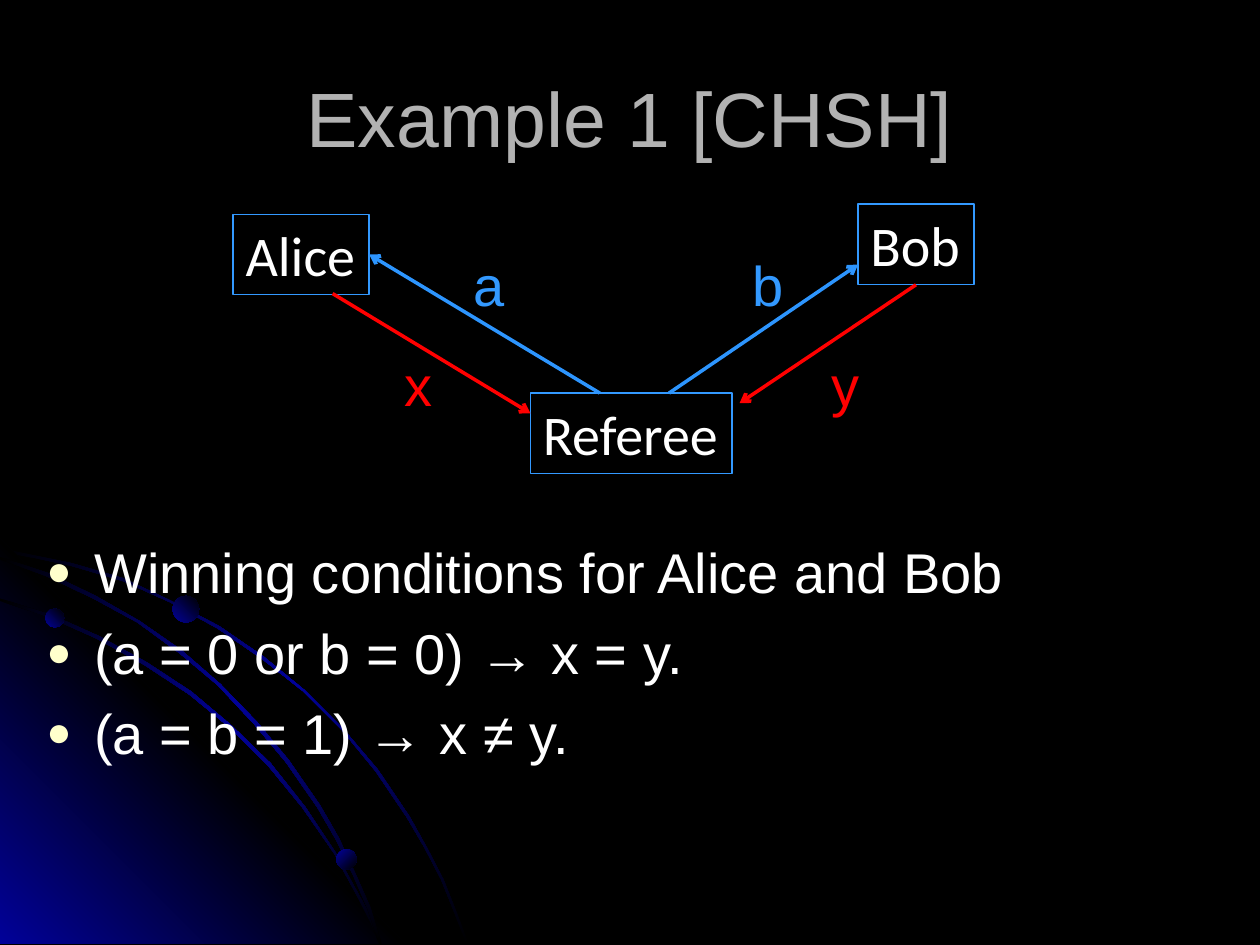
from lxml.etree import SubElement
from pptx import Presentation
from pptx.dml.color import RGBColor
from pptx.enum.shapes import MSO_CONNECTOR as Link, MSO_SHAPE as Preset
from pptx.enum.text import MSO_ANCHOR as Anchor, PP_ALIGN as Align
from pptx.oxml import parse_xml
from pptx.oxml.ns import nsdecls, qn
from pptx.util import Inches, Pt

BLACK, WHITE, NAVY, RED = "000000", "FFFFFF", "010199", "FF0000"
SKY, ARROW_BLUE, GREY, CREAM = "3399FF", "2D95FE", "B2B2B2", "FFFFCC"

TITLE = "Example 1 [CHSH]"
CONDITIONS = [
    "Winning conditions for Alice and Bob",
    "(a = 0 or b = 0) → x = y.",
    "(a = b = 1) → x ≠ y.",
]
PLAYERS = [  # name, left, top, width
    ("Alice", 1.85, 1.7, 1.08),
    ("Bob", 6.81, 1.62, 0.92),
    ("Referee", 4.21, 3.12, 1.6),
]
MESSAGES = [  # start, end, colour
    ((4.76, 3.12), (2.93, 2.02), ARROW_BLUE),
    ((5.31, 3.12), (6.81, 2.1), ARROW_BLUE),
    ((7.27, 2.26), (5.87, 3.2), RED),
    ((2.64, 2.33), (4.21, 3.28), RED),
]
MESSAGE_NAMES = [  # name, left, top, width, colour
    ("a", 3.66, 1.94, 0.45, SKY),
    ("b", 5.87, 1.94, 0.45, SKY),
    ("x", 3.11, 2.73, 0.42, RED),
    ("y", 6.5, 2.73, 0.42, RED),
]

GLOW = [(0, NAVY), (50, BLACK), (100, NAVY)]
STREAK = [(0, BLACK), (50, NAVY), (100, BLACK)]
BALL = [(0, NAVY), (100, BLACK)]
OUTER_ORBIT = [
    (0.57, 4.47), (0.28, 4.41), (0, 4.35), (0, 4.38), (0.28, 4.43), (0.56, 4.49),
    (0.97, 4.61), (1.35, 4.78), (1.73, 4.99), (2.08, 5.23), (2.41, 5.49),
    (2.71, 5.79), (2.98, 6.12), (3.23, 6.49), (3.37, 6.73), (3.5, 6.98),
    (3.6, 7.23), (3.7, 7.49), (3.72, 7.49), (3.62, 7.23), (3.52, 6.98),
    (3.39, 6.73), (3.25, 6.48), (3, 6.11), (2.72, 5.78), (2.42, 5.48),
    (2.09, 5.21), (1.74, 4.97), (1.36, 4.77), (0.98, 4.59)]
CORNER = [(3.22, 7.49), (0, 7.49), (0, 4.27)]
INNER_ORBIT = [
    (2.85, 7.14), (2.94, 7.32), (3.01, 7.49), (3.03, 7.49), (2.96, 7.3),
    (2.86, 7.12), (2.66, 6.76), (2.42, 6.4), (2.15, 6.06), (1.84, 5.76),
    (1.52, 5.49), (1.17, 5.26), (0.79, 5.05), (0.41, 4.88), (0, 4.75),
    (0, 4.77), (0.39, 4.9), (0.77, 5.07), (1.15, 5.28), (1.5, 5.51),
    (1.83, 5.78), (2.13, 6.08), (2.4, 6.41), (2.65, 6.77)]
MIDDLE_ORBIT = [
    (0, 4.42), (0, 4.44), (0.36, 4.57), (0.74, 4.75), (1.09, 4.94), (1.42, 5.18),
    (1.73, 5.44), (2.02, 5.75), (2.27, 6.05), (2.52, 6.41), (2.67, 6.67),
    (2.8, 6.94), (2.92, 7.22), (3.01, 7.49), (3.03, 7.49), (2.94, 7.2),
    (2.82, 6.93), (2.69, 6.65), (2.54, 6.39), (2.29, 6.03), (2.04, 5.73),
    (1.75, 5.43), (1.44, 5.16), (1.11, 4.93), (0.76, 4.73), (0.39, 4.55)]
BACKDROP = [  # outline, gradient, angle
    (OUTER_ORBIT, STREAK, 45),
    (CORNER, GLOW, 315),
    (INNER_ORBIT, STREAK, 45),
    (MIDDLE_ORBIT, STREAK, 45),
]
BALLS = [  # left, top, diameter, angle
    (0.36, 4.83, 0.15, 315),
    (2.67, 6.74, 0.16, 45),
    (1.37, 4.73, 0.21, 315),
]


def rgb(value):
    return RGBColor.from_string(value)


def paint_gradient(shape, stops, angle):
    """Fill with colour stops along a clockwise angle, with no outline."""
    shape.shadow.inherit = False
    shape.line.fill.background()
    marks = "".join(
        f'<a:gs pos="{pos * 1000}"><a:srgbClr val="{colour}"/></a:gs>'
        for pos, colour in stops)
    gradient = parse_xml(
        f'<a:gradFill {nsdecls("a")} rotWithShape="1"><a:gsLst>{marks}</a:gsLst>'
        f'<a:lin ang="{angle * 60000}" scaled="0"/></a:gradFill>')
    shape.line._ln.addprevious(gradient)


def style(paragraph, font, size, colour, align=Align.LEFT):
    paragraph.alignment = align
    paragraph.font.name = font
    paragraph.font.size = Pt(size)
    paragraph.font.color.rgb = rgb(colour)


def add_bullet(paragraph):
    props = paragraph._p.get_or_add_pPr()
    props.set("marL", str(Inches(0.38)))
    props.set("indent", str(Inches(-0.38)))
    bullet = [
        f'<a:buClr {nsdecls("a")}><a:srgbClr val="{CREAM}"/></a:buClr>',
        f'<a:buSzPct {nsdecls("a")} val="75000"/>',
        f'<a:buFont {nsdecls("a")} typeface="Arial"/>',
        f'<a:buChar {nsdecls("a")} char="●"/>',
    ]
    run_defaults = props.find(qn("a:defRPr"))
    for part in bullet:
        run_defaults.addprevious(parse_xml(part))


def add_text(shapes, box, wrap=True):
    frame = shapes.add_textbox(*map(Inches, box)).text_frame
    frame.word_wrap = wrap
    return frame


def add_backdrop(shapes):
    for outline, stops, angle in BACKDROP:
        points = [(Inches(x), Inches(y)) for x, y in outline]
        builder = shapes.build_freeform(*points[0])
        builder.add_line_segments(points[1:], close=True)
        paint_gradient(builder.convert_to_shape(), stops, angle)
    for left, top, size, angle in BALLS:
        ball = shapes.add_shape(Preset.OVAL, *map(Inches, (left, top, size, size)))
        paint_gradient(ball, BALL, angle)


def add_game(shapes):
    for name, left, top, width in PLAYERS:
        player = shapes.add_shape(
            Preset.RECTANGLE, *map(Inches, (left, top, width, 0.64)))
        player.shadow.inherit = False
        player.fill.background()
        player.line.color.rgb = rgb(SKY)
        player.line.width = Pt(0.75)
        frame = player.text_frame
        frame.word_wrap = False
        frame.vertical_anchor = Anchor.TOP
        frame.text = name
        style(frame.paragraphs[0], "Calibri", 32, WHITE)
    for start, end, colour in MESSAGES:
        arrow = shapes.add_connector(Link.STRAIGHT, *map(Inches, start + end))
        arrow.line.color.rgb = rgb(colour)
        arrow.line.width = Pt(2)
        SubElement(arrow.line._ln, qn("a:tailEnd"), type="arrow")
        SubElement(arrow._element.spPr, qn("a:effectLst"))
    for name, left, top, width, colour in MESSAGE_NAMES:
        frame = add_text(shapes, (left, top, width, 0.63), wrap=False)
        frame.text = name
        style(frame.paragraphs[0], "Arial", 32, colour)


def main():
    deck = Presentation()
    deck.slide_width, deck.slide_height = Inches(10), Inches(7.5)
    slide = deck.slides.add_slide(deck.slide_layouts[6])
    slide.background.fill.solid()
    slide.background.fill.fore_color.rgb = rgb(BLACK)

    add_backdrop(slide.shapes)

    title = add_text(slide.shapes, (0.5, 0.3, 9, 1.25))
    title.vertical_anchor = Anchor.MIDDLE
    title.text = TITLE
    style(title.paragraphs[0], "Arial", 44, GREY, Align.CENTER)

    conditions = add_text(slide.shapes, (0.27, 4.22, 9.23, 2.6))
    conditions.text = "\n".join(CONDITIONS)
    for condition in conditions.paragraphs:
        style(condition, "Arial", 32, WHITE)
        condition.space_before = Pt(7.5)
        add_bullet(condition)

    add_game(slide.shapes)
    deck.save("out.pptx")


if __name__ == "__main__":
    main()
